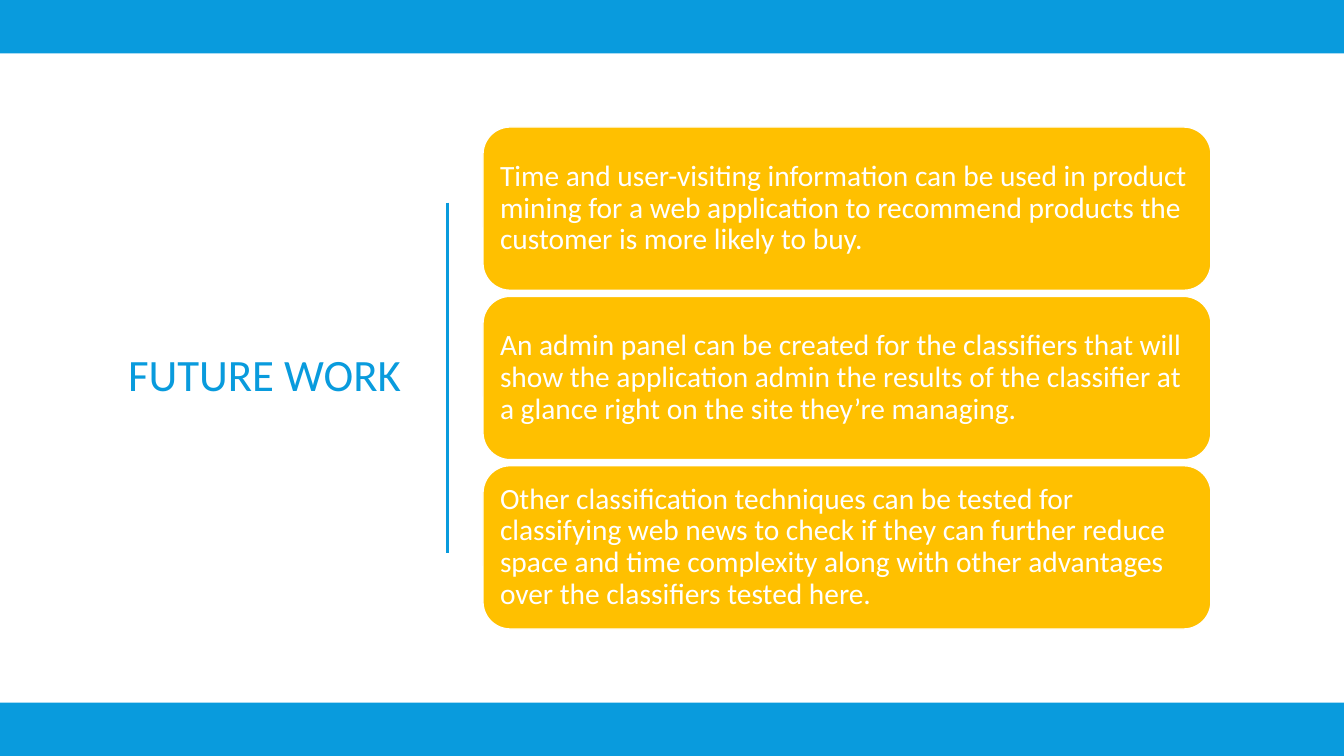
"""Build the Future Work slide: a title beside three rounded cards."""
from lxml import etree
from pptx import Presentation, util as u
from pptx.dml.color import RGBColor as Rgb
from pptx.enum import shapes as es, text as et
from pptx.oxml.ns import qn

PX = 9144
THEME = {
    "font": "Calibri",
    "blue": Rgb.from_string("099BDD"),
    "gold": Rgb.from_string("FFC000"),
    "white": Rgb.from_string("FFFFFF"),
    "title": u.Pt(32),
    "card": u.Pt(21),
}
CARDS = [
    "Time and user-visiting information can be used in product mining for a web application "
    "to recommend products the customer is more likely to buy.",
    "An admin panel can be created for the classifiers that will show the application admin "
    "the results of the classifier at a glance right on the site they’re managing.",
    "Other classification techniques can be tested for classifying web news to check if they "
    "can further reduce space and time complexity along with other advantages over the "
    "classifiers tested here.",
]


def draw(kind, left, top, width, height, fill):
    shape = slide.shapes.add_shape(kind, left * PX, top * PX, width * PX, height * PX)
    shape.shadow.inherit = False
    shape.fill.solid()
    shape.fill.fore_color.rgb = THEME[fill]
    shape.line.fill.background()
    return shape


def write(shape, words, size, color, align, space):
    frame = shape.text_frame
    frame.text = words
    frame.word_wrap = True
    frame.auto_size = et.MSO_AUTO_SIZE.NONE
    frame.vertical_anchor = et.MSO_ANCHOR.MIDDLE
    para = frame.paragraphs[0]
    para.alignment = align
    para.line_spacing = space
    para.font.name = THEME["font"]
    para.font.size = THEME[size]
    para.font.color.rgb = THEME[color]
    return frame


prs = Presentation()
prs.slide_width, prs.slide_height = 1333 * PX, 750 * PX
slide = prs.slides.add_slide(prs.slide_layouts[5])
slide.background.fill.solid()
slide.background.fill.fore_color.rgb = THEME["white"]

title = slide.shapes.title
title.left, title.top, title.width, title.height = 70 * PX, 145 * PX, 338 * PX, 460 * PX
write(title, "FUTURE WORK", "title", "blue", et.PP_ALIGN.RIGHT, 0.85)

for top in (0, 697):
    draw(es.MSO_SHAPE.RECTANGLE, 0, top, 1333, 53, "blue")

rule = slide.shapes.add_connector(es.MSO_CONNECTOR.STRAIGHT, 444 * PX, 201 * PX, 444 * PX, 549 * PX)
rule.line.color.rgb = THEME["blue"]
rule.line.width = u.Pt(2)
etree.SubElement(rule._element.spPr, qn("a:effectLst"))

for row, words in enumerate(CARDS):
    card = draw(es.MSO_SHAPE.ROUNDED_RECTANGLE, 479, 126 + 168 * row, 722, 162, "gold")
    card.line.color.rgb = THEME["white"]
    card.line.width = u.Pt(1)
    frame = write(card, words, "card", "white", et.PP_ALIGN.LEFT, 0.9)
    frame.margin_left = frame.margin_right = 9 * PX
    frame.margin_top = frame.margin_bottom = 9 * PX

prs.save("out.pptx")
